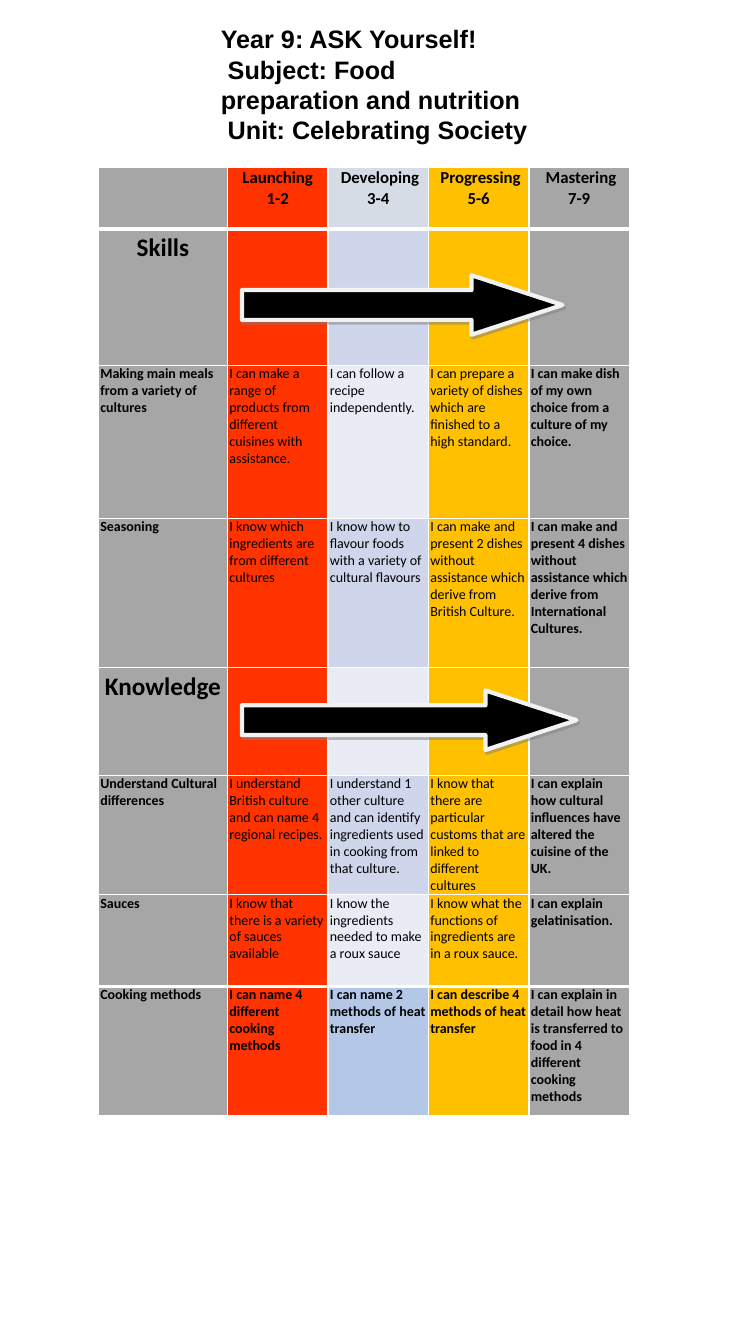
from lxml import etree
from pptx import Presentation
from pptx.dml.color import RGBColor
from pptx.enum.shapes import MSO_SHAPE
from pptx.enum.text import MSO_ANCHOR, MSO_AUTO_SIZE, PP_ALIGN
from pptx.oxml import parse_xml
from pptx.oxml.ns import nsdecls, qn
from pptx.util import Pt

BLACK = RGBColor(0x00, 0x00, 0x00)
OFF_WHITE = RGBColor(0xF2, 0xF2, 0xF2)
GREY = RGBColor(0xA6, 0xA6, 0xA6)
RED = RGBColor(0xFF, 0x33, 0x00)
AMBER = RGBColor(0xFF, 0xC0, 0x00)
HEADER_BLUE = RGBColor(0xD6, 0xDC, 0xE5)
MID_BLUE = RGBColor(0xCF, 0xD5, 0xEA)
PALE_BLUE = RGBColor(0xE9, 0xEB, 0xF5)
STRONG_BLUE = RGBColor(0xB4, 0xC7, 0xE7)


def write_text(text_frame, text, size=10, font="Calibri", bold=False,
               align=PP_ALIGN.LEFT, line_spacing=None):
    text_frame.word_wrap = True
    text_frame.text = text
    for paragraph in text_frame.paragraphs:
        paragraph.alignment = align
        paragraph.line_spacing = line_spacing
        paragraph.font.size = Pt(size)
        for run in paragraph.runs:
            run.font.size = Pt(size)
            run.font.name = font
            run.font.bold = bold
            run.font.color.rgb = BLACK


def add_border(cell, side, width):
    properties = cell._tc.get_or_add_tcPr()
    line = etree.SubElement(properties, qn(f"a:ln{side}"), w=str(Pt(width)))
    fill = etree.SubElement(line, qn("a:solidFill"))
    etree.SubElement(fill, qn("a:srgbClr"), val="FFFFFF")


presentation = Presentation()
presentation.slide_width = Pt(540)
presentation.slide_height = Pt(960)
slide = presentation.slides.add_slide(presentation.slide_layouts[5])

# Title
title = slide.shapes.title
title.left, title.top, title.width, title.height = Pt(150.5), Pt(13), Pt(239), Pt(94.3)
title.text_frame.vertical_anchor = MSO_ANCHOR.TOP
title.text_frame.auto_size = MSO_AUTO_SIZE.NONE
write_text(title.text_frame,
           "Year 9: ASK Yourself!\n Subject: Food preparation and nutrition\n"
           " Unit: Celebrating Society",
           size=18, font="Arial", bold=True, line_spacing=Pt(21.7))

# Table content
rows = [
    ["", "Launching\n1-2", " Developing\n3-4", " Progressing\n5-6", " Mastering\n7-9"],
    ["Skills", "", "", "", ""],
    ["Making main meals from a variety of cultures",
     "I can make a range of products from different cuisines with assistance.",
     "I can follow a recipe independently.",
     "I can prepare a variety of dishes which are finished to a high standard.",
     "I can make dish of my own choice from a culture of my choice."],
    ["Seasoning",
     "I know which ingredients are from different cultures",
     "I know how to flavour foods with a variety of cultural flavours",
     "I can make and present 2 dishes without assistance which derive from British Culture.",
     "I can make and present 4 dishes without assistance which derive from "
     "International Cultures."],
    ["Knowledge", "", "", "", ""],
    ["Understand Cultural differences",
     "I understand British culture and can name 4 regional recipes.",
     "I understand 1 other culture and can identify ingredients used in cooking "
     "from that culture.",
     "I know that there are particular customs that are linked to different cultures",
     "I can explain how cultural influences have altered the cuisine of the UK."],
    ["Sauces",
     "I know that there is a variety of sauces available",
     "I know the ingredients needed to make a roux sauce",
     "I know what the functions of ingredients are in a roux sauce.",
     "I can explain gelatinisation."],
    ["Cooking methods",
     "I can name 4 different cooking methods",
     "I can name 2 methods of heat transfer",
     "I can describe 4 methods of heat transfer",
     "I can explain in detail how heat is transferred to food in 4 different "
     "cooking methods"],
]
row_heights = [44, 97.2, 109.4, 106.6, 77, 85.2, 65.5, 92.2]
column_widths = [92.2] + [71.8] * 4
column_fills = [GREY, RED, None, AMBER, GREY]
developing_fills = [HEADER_BLUE] + [MID_BLUE, PALE_BLUE] * 3 + [STRONG_BLUE]
section_rows = (1, 4)
last_row, last_column = len(rows) - 1, len(column_widths) - 1
thick_edges = (1, last_row)

# Progress table
table = slide.shapes.add_table(len(rows), len(column_widths), Pt(70.3), Pt(119.8),
                               Pt(sum(column_widths)), Pt(sum(row_heights))).table
table.first_row = False
table.horz_banding = False
for column, width in zip(table.columns, column_widths):
    column.width = Pt(width)

for r, (texts, height) in enumerate(zip(rows, row_heights)):
    table.rows[r].height = Pt(height)
    for c, text in enumerate(texts):
        cell = table.cell(r, c)
        cell.margin_left = cell.margin_right = Pt(1.4)
        cell.margin_top = Pt(2.4 if r in section_rows else 0)
        cell.margin_bottom = Pt(0)
        for side, edge in (("L", None), ("R", None), ("T", r), ("B", r + 1)):
            add_border(cell, side, 3 if edge in thick_edges else 1)
        cell.fill.solid()
        cell.fill.fore_color.rgb = column_fills[c] or developing_fills[r]
        size = 12 if r == 0 else 18 if r in section_rows else 10
        write_text(cell.text_frame, text, size=size,
                   bold=r in (0, last_row) or c in (0, last_column),
                   align=PP_ALIGN.LEFT if size == 10 else PP_ALIGN.CENTER)

# Progress arrows across the section rows
for top, width in ((196.6, 229), (493.2, 239)):
    arrow = slide.shapes.add_shape(MSO_SHAPE.RIGHT_ARROW, Pt(172.8), Pt(top),
                                   Pt(width), Pt(42.5))
    arrow.adjustments[0] = 0.5
    arrow.adjustments[1] = 1.53
    arrow.fill.solid()
    arrow.fill.fore_color.rgb = BLACK
    arrow.line.color.rgb = OFF_WHITE
    arrow.line.width = Pt(3)
    arrow._element.spPr.append(parse_xml(
        f'<a:effectLst {nsdecls("a")}><a:outerShdw dist="{Pt(2.2)}" dir="{63 * 60000}" '
        'algn="ctr" rotWithShape="0"><a:srgbClr val="7F7F7F"><a:alpha val="50000"/>'
        '</a:srgbClr></a:outerShdw></a:effectLst>'))

presentation.save("out.pptx")
